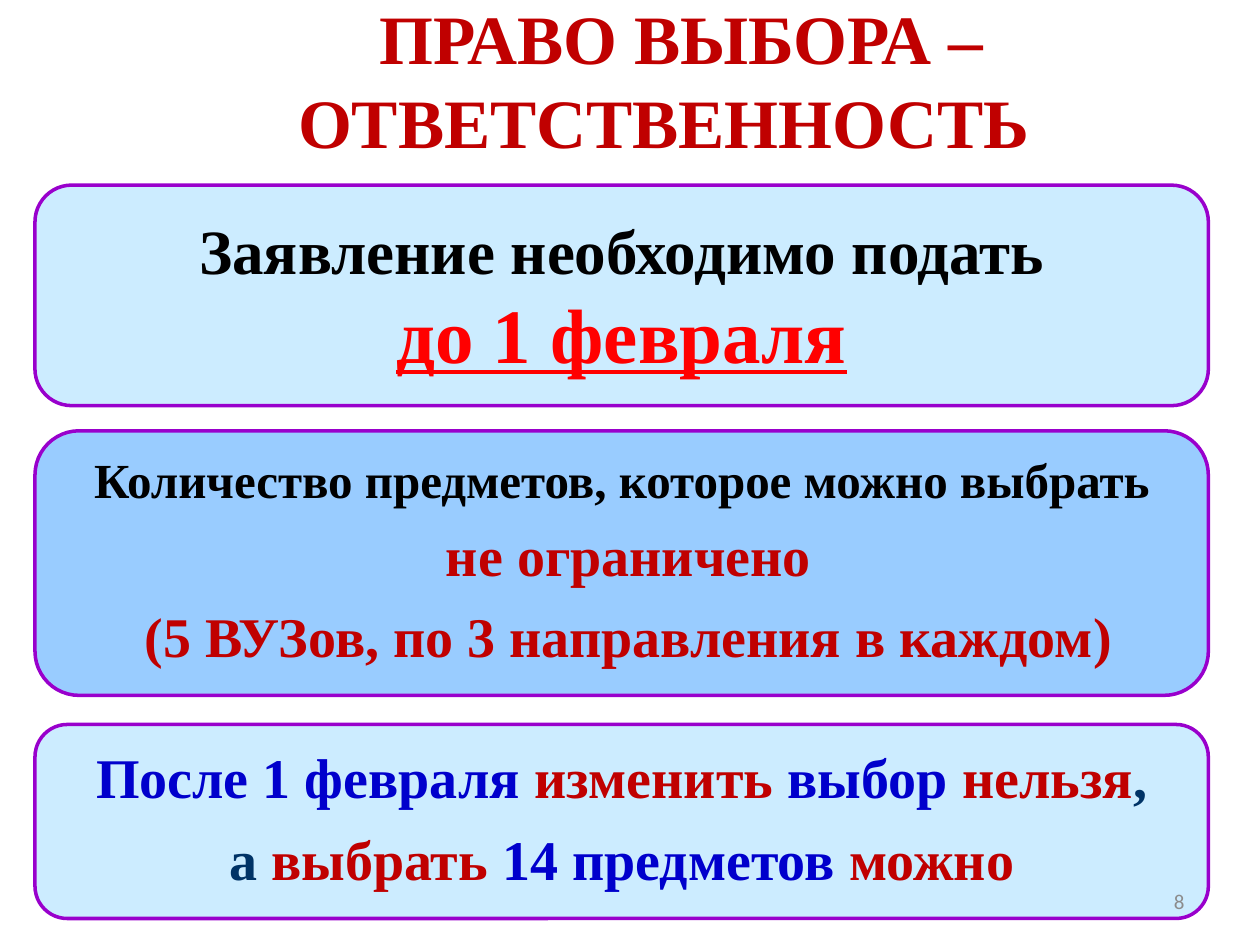
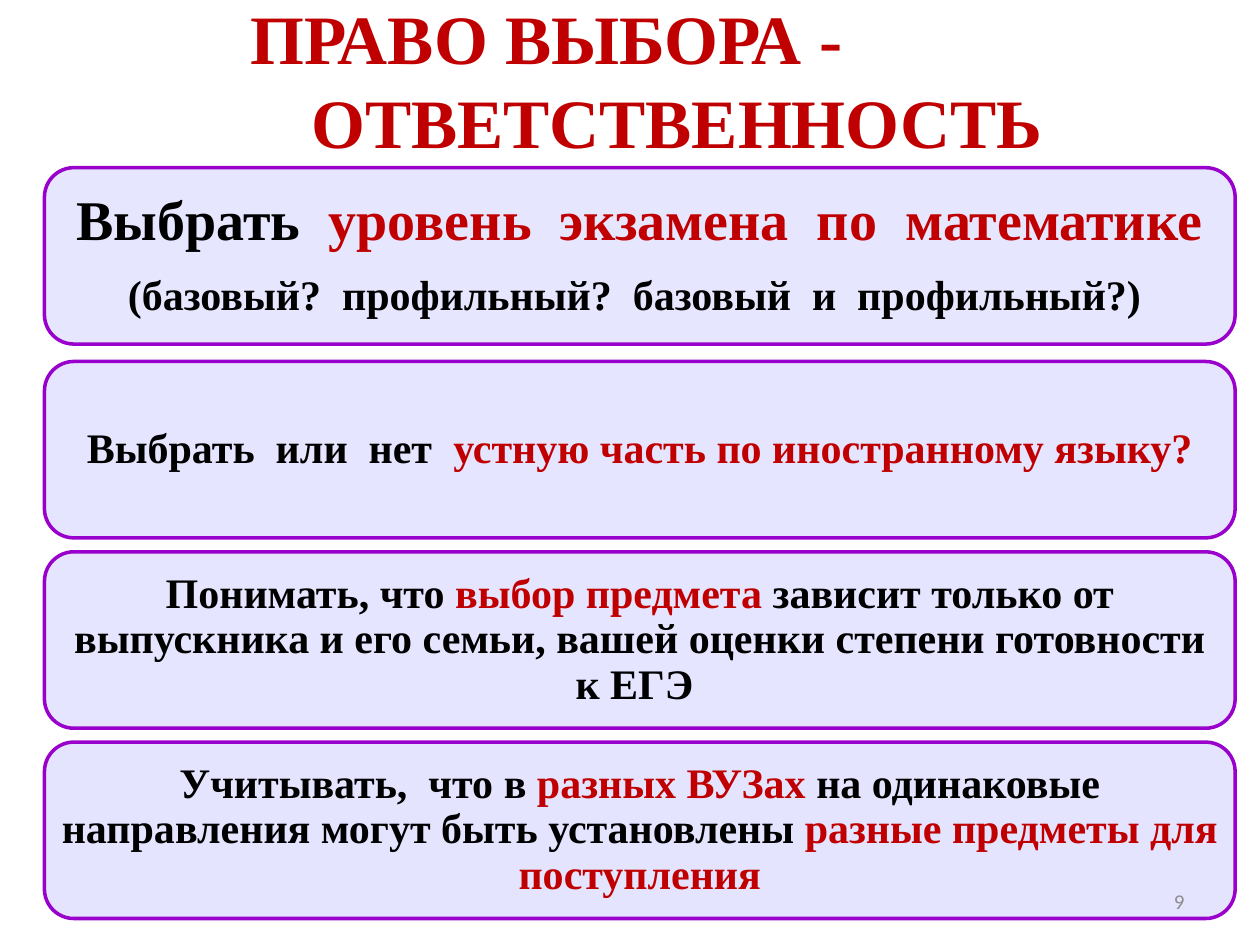
import pptx
import pptx.util
import pptx.dml.color
import pptx.enum.shapes
import pptx.enum.text
import lxml.etree

Pt = pptx.util.Pt
RGB = pptx.dml.color.RGBColor
Align = pptx.enum.text.PP_ALIGN
Anchor = pptx.enum.text.MSO_ANCHOR

# Colours and fonts
BLACK = RGB(0x00, 0x00, 0x00)
DARK = RGB(0xC0, 0x00, 0x00)
RED = RGB(0xFF, 0x00, 0x00)
BLUE = RGB(0x00, 0x00, 0xCC)
NAVY = RGB(0x00, 0x33, 0x66)
GREY = RGB(0x8C, 0x8C, 0x8C)
EDGE = RGB(0x99, 0x00, 0xCC)
PALE = RGB(0xCC, 0xEC, 0xFF)
SKY = RGB(0x99, 0xCC, 0xFF)
LILAC = RGB(0xCC, 0xCC, 0xFF)
SERIF, SANS = "Times New Roman", "Calibri"

# Content: each line is a size and its (text, colour) runs
TERMS = [
    [(36, [("Заявление необходимо подать", BLACK)]),
     (44, [("до 1 февраля", RED)])],
    [(28, [("Количество предметов, которое можно выбрать", BLACK)]),
     (32, [(" не ограничено", DARK)]),
     (32, [(" (5 ВУЗов, по 3 направления в каждом)", DARK)])],
    [(32, [("После 1 февраля ", BLUE), ("изменить ", DARK),
           ("выбор ", BLUE), ("нельзя", DARK), (",", NAVY)]),
     (32, [("а ", NAVY), ("выбрать ", DARK),
           ("14 предметов ", BLUE), ("можно", DARK)])],
]
CHOICES = [
    [(32, [("Выбрать  ", BLACK),
           ("уровень  экзамена  по  математике", DARK)]),
     (24, [("(базовый?  профильный?  базовый  и  профильный?) ", BLACK)])],
    [(24, [("Выбрать  или  нет  ", BLACK),
           ("устную часть по иностранному языку?", DARK)])],
    [(24, [("Понимать, что ", BLACK), ("выбор предмета ", DARK),
           ("зависит только от выпускника и его семьи, вашей оценки "
            "степени готовности к ЕГЭ ", BLACK)])],
    [(24, [("Учитывать,  что в ", BLACK), ("разных ВУЗах ", DARK),
           ("на одинаковые направления могут быть установлены ", BLACK),
           ("разные предметы для поступления", DARK)])],
]
# Title lines: text, alignment, left indent
HEAD_ONE = [("ПРАВО ВЫБОРА –", Align.CENTER, 59),
            ("ОТВЕТСТВЕННОСТЬ", Align.CENTER, 39)]
HEAD_TWO = [("ПРАВО ВЫБОРА -", Align.LEFT, 82),
            ("ОТВЕТСТВЕННОСТЬ", Align.CENTER, 0)]

# Box places: top, height, fill, text margin
TERM_ROWS = [(105.8, 126, PALE, 10.8), (246.2, 151.2, SKY, 8.6),
             (414, 110.9, PALE, 9.4)]
TALL, STEP, LAST = 100.8, 108.75, 424.1


def add_run(para, text, size, color, font=SERIF, bold=True):
    run = para.add_run()
    run.text = text
    run.font.size = Pt(size)
    run.font.name = font
    run.font.bold = bold
    run.font.color.rgb = color
    return run


def next_para(frame, first):
    return frame.paragraphs[0] if first else frame.add_paragraph()


def add_head(slide, lines, left):
    head = slide.shapes.title
    head.left, head.top = Pt(left), Pt(0)
    head.width, head.height = Pt(720 - left), Pt(90)
    frame = head.text_frame
    frame.auto_size = pptx.enum.text.MSO_AUTO_SIZE.NONE
    frame.vertical_anchor = Anchor.MIDDLE
    for i, (text, align, indent) in enumerate(lines):
        para = next_para(frame, i == 0)
        para.alignment = align
        para.line_spacing = Pt(48)
        para.space_before = Pt(0)
        para._p.get_or_add_pPr().set("marL", str(Pt(indent)))
        add_run(para, text, 39.6, DARK)


def add_box(slide, left, top, width, height, fill, margin, lines,
            alpha=None, tight=True):
    box = slide.shapes.add_shape(
        pptx.enum.shapes.MSO_SHAPE.ROUNDED_RECTANGLE,
        Pt(left), Pt(top), Pt(width), Pt(height))
    box.shadow.inherit = False
    box.fill.solid()
    box.fill.fore_color.rgb = fill
    if alpha:
        tint = box.fill._xPr.find(".//" + pptx.oxml.ns.qn("a:srgbClr"))
        lxml.etree.SubElement(tint, pptx.oxml.ns.qn("a:alpha"),
                              val=str(round(alpha * 1000)))
    box.line.color.rgb = EDGE
    box.line.width = Pt(2)
    frame = box.text_frame
    frame.word_wrap = True
    frame.vertical_anchor = Anchor.MIDDLE
    # The rounded corners already hold the text in by this much
    inset = Pt(margin - 0.049 * height)
    frame.margin_left = frame.margin_right = inset
    frame.margin_top = frame.margin_bottom = inset
    for i, (size, runs) in enumerate(lines):
        para = next_para(frame, i == 0)
        para.alignment = Align.CENTER
        if tight:
            para.line_spacing = 0.9
            para.space_after = Pt(0.38 * size)
        for text, color in runs:
            run = add_run(para, text, size, color)
            if color == RED:
                run.font.underline = True


def add_num(slide, num):
    box = slide.shapes.add_textbox(Pt(516), Pt(500.5), Pt(168), Pt(28.75))
    frame = box.text_frame
    frame.word_wrap = True
    frame.vertical_anchor = Anchor.MIDDLE
    para = frame.paragraphs[0]
    para.alignment = Align.RIGHT
    add_run(para, str(num), 12, GREY, SANS, False)


def main():
    deck = pptx.Presentation()
    deck.slide_width, deck.slide_height = Pt(720), Pt(540)
    plain = deck.slide_layouts[5]

    # Deadline and number of subjects
    slide = deck.slides.add_slide(plain)
    add_head(slide, HEAD_ONE, 0)
    for i, (row, lines) in enumerate(zip(TERM_ROWS, TERMS)):
        top, height, fill, margin = row
        add_box(slide, 20, top, 670.5, height, fill, margin, lines,
                tight=i > 0)
    add_num(slide, 8)

    # What to choose
    slide = deck.slides.add_slide(plain)
    add_head(slide, HEAD_TWO, 54)
    for i, lines in enumerate(CHOICES):
        top = LAST - STEP * (len(CHOICES) - 1 - i)
        if i == 0:
            top -= 2
        add_box(slide, 25.4, top, 680.4, TALL, LILAC, 9.4 if i == 0 else 7.2,
                lines, alpha=48 + 5 * i / 3)
    add_num(slide, 9)

    deck.save("out.pptx")


if __name__ == "__main__":
    main()
